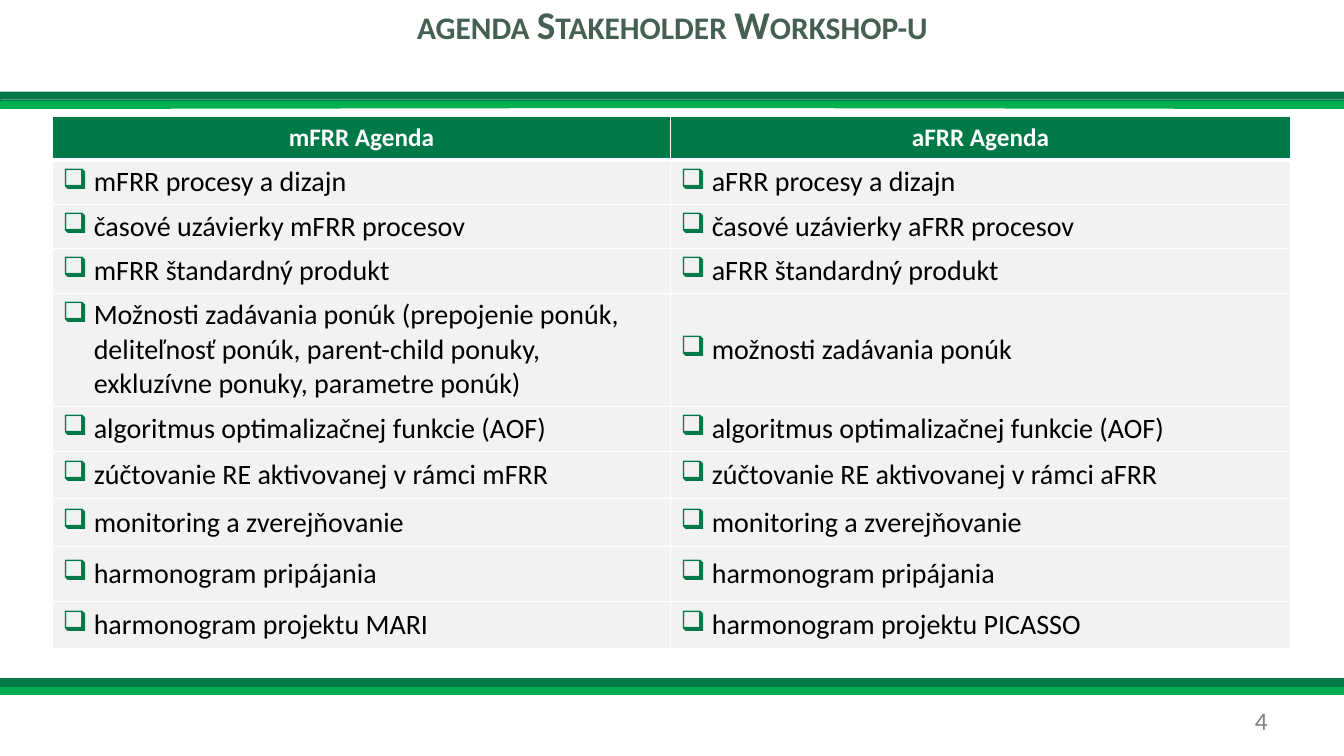
from dataclasses import dataclass
from lxml.etree import SubElement
from pptx import Presentation
from pptx.dml.color import RGBColor
from pptx.enum.shapes import MSO_SHAPE
from pptx.enum.text import MSO_ANCHOR, PP_ALIGN
from pptx.oxml import parse_xml
from pptx.oxml.ns import nsdecls, qn
from pptx.util import Inches, Pt


@dataclass(frozen=True)
class Theme:
    face: str = "Calibri"
    dark: str = "007948"
    light: str = "00B050"
    slate: str = "455F51"
    grey: str = "808080"
    pale: str = "F2F2F2"
    white: str = "FFFFFF"
    black: str = "000000"
    title: int = 28
    head: int = 18
    body: int = 20
    page: int = 18


class Deck:
    def __init__(self, theme):
        self.theme = theme
        self.show = Presentation()
        self.show.slide_width = Inches(13.33)
        self.show.slide_height = Inches(7.5)
        self.slide = self.show.slides.add_slide(self.show.slide_layouts[5])

    def place(self, shape, box):
        for name, value in zip(("left", "top", "width", "height"), box):
            setattr(shape, name, Inches(value))

    def fill_text(self, frame, text, size, color, bold=False,
                  align=PP_ALIGN.LEFT):
        para = frame.paragraphs[0]
        para.alignment = align
        run = para.add_run()
        run.text = text
        style = {"name": self.theme.face, "size": Pt(size), "bold": bold}
        for name, value in style.items():
            setattr(run.font, name, value)
        run.font.color.rgb = RGBColor.from_string(color)
        return run

    def title(self, text, box):
        shape = self.slide.shapes.title
        self.place(shape, box)
        frame = shape.text_frame
        frame.vertical_anchor = MSO_ANCHOR.TOP
        run = self.fill_text(frame, text, self.theme.title, self.theme.slate,
                             True, PP_ALIGN.CENTER)
        props = run._r.get_or_add_rPr()
        props.set("cap", "small")
        glow = parse_xml(
            f'<a:effectLst {nsdecls("a")}><a:outerShdw blurRad="38100" '
            'dist="38100" dir="2700000" algn="tl"><a:srgbClr val="000000">'
            '<a:alpha val="43000"/></a:srgbClr></a:outerShdw></a:effectLst>')
        props.find(qn("a:solidFill")).addnext(glow)

    def band(self, top, color):
        shape = self.slide.shapes.add_shape(
            MSO_SHAPE.RECTANGLE, 0, Inches(top), Inches(13.33), Inches(0.08))
        shape.shadow.inherit = False
        shape.fill.solid()
        for part in (shape.fill.fore_color, shape.line.color):
            part.rgb = RGBColor.from_string(color)
        shape.line.width = Pt(0.25)

    def label(self, text, box):
        shape = self.slide.shapes.add_textbox(*map(Inches, box))
        frame = shape.text_frame
        frame.word_wrap = True
        frame.vertical_anchor = MSO_ANCHOR.MIDDLE
        self.fill_text(frame, text, self.theme.page, self.theme.grey,
                       align=PP_ALIGN.RIGHT)

    def bullet(self, para):
        props = para._p.get_or_add_pPr()
        props.set("marL", str(Inches(0.31)))
        props.set("indent", str(-Inches(0.31)))
        tint = SubElement(props, qn("a:buClr"))
        SubElement(tint, qn("a:srgbClr"), val=self.theme.dark)
        SubElement(props, qn("a:buChar"), char="❑")

    def edge(self, cell, row):
        props = cell._tc.get_or_add_tcPr()
        widths = {"L": 1, "R": 1, "T": 3 if row == 1 else 1,
                  "B": 3 if row == 0 else 1}
        for side, width in widths.items():
            line = SubElement(props, qn(f"a:ln{side}"), w=str(Pt(width)))
            fill = SubElement(line, qn("a:solidFill"))
            SubElement(fill, qn("a:srgbClr"), val=self.theme.white)

    def cell(self, cell, row, text):
        theme = self.theme
        self.edge(cell, row)
        cell.vertical_anchor = MSO_ANCHOR.MIDDLE
        cell.fill.solid()
        shade = theme.pale if row else theme.dark
        cell.fill.fore_color.rgb = RGBColor.from_string(shade)
        if row:
            self.bullet(cell.text_frame.paragraphs[0])
            self.fill_text(cell.text_frame, text, theme.body, theme.black)
        else:
            self.fill_text(cell.text_frame, text, theme.head, theme.white,
                           True, PP_ALIGN.CENTER)

    def table(self, rows, left, top, widths, heights):
        frame = self.slide.shapes.add_table(
            len(rows), len(widths), Inches(left), Inches(top),
            Inches(sum(widths)), Inches(sum(heights)))
        grid = frame.table
        for col, width in zip(grid.columns, widths):
            col.width = Inches(width)
        for line, height in zip(grid.rows, heights):
            line.height = Inches(height)
        for row, texts in enumerate(rows):
            for col, text in enumerate(texts):
                self.cell(grid.cell(row, col), row, text)


def main():
    theme = Theme()
    deck = Deck(theme)
    for top in (0.91, 6.73):
        deck.band(top + 0.08, theme.light)
        deck.band(top, theme.dark)
    deck.title("agenda Stakeholder Workshop-u", (0.67, -0.05, 12, 0.92))
    deck.label("4", (9.56, 6.95, 3.11, 0.4))

    topics = [
        "{} Agenda",
        "{} procesy a dizajn",
        "časové uzávierky {} procesov",
        "{} štandardný produkt",
        "možnosti zadávania ponúk",
        "algoritmus optimalizačnej funkcie (AOF)",
        "zúčtovanie RE aktivovanej v rámci {}",
        "monitoring a zverejňovanie",
        "harmonogram pripájania",
    ]
    rows = [[topic.format(kind) for kind in ("mFRR", "aFRR")]
            for topic in topics]
    rows[4][0] = ("Možnosti zadávania ponúk (prepojenie ponúk, deliteľnosť "
                  "ponúk, parent-child ponuky, exkluzívne ponuky, "
                  "parametre ponúk)")
    rows.append([f"harmonogram projektu {name}"
                 for name in ("MARI", "PICASSO")])
    heights = [0.44] * 4 + [1.12, 0.45, 0.47, 0.47, 0.55, 0.47]
    deck.table(rows, 0.52, 1.15, (6.13, 6.15), heights)
    deck.show.save("out.pptx")


if __name__ == "__main__":
    main()
